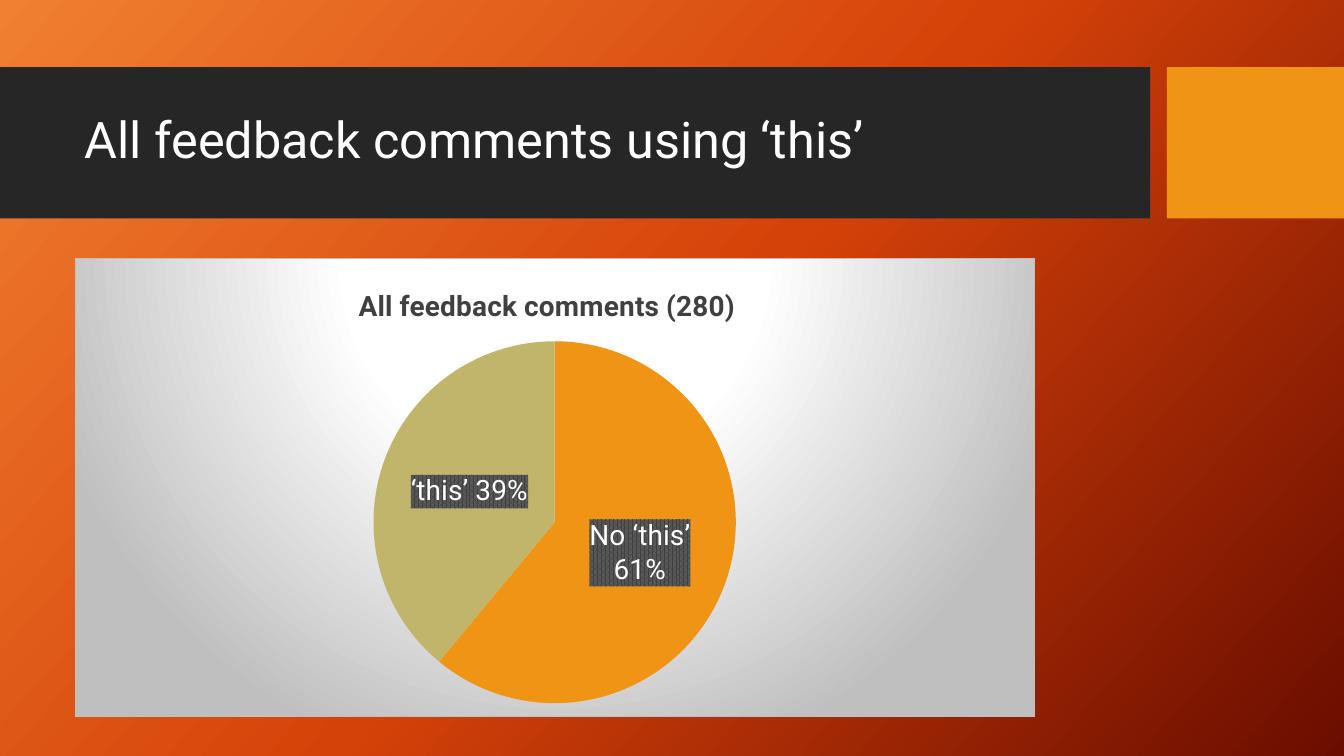
from lxml import etree
from pptx import Presentation
from pptx.chart.data import CategoryChartData
from pptx.dml.color import RGBColor
from pptx.enum.chart import XL_CHART_TYPE, XL_LABEL_POSITION
from pptx.enum.shapes import MSO_SHAPE
from pptx.enum.text import MSO_ANCHOR
from pptx.oxml import parse_xml
from pptx.oxml.ns import nsdecls, qn
from pptx.util import Pt

PIE = XL_CHART_TYPE.PIE
CENTER = XL_LABEL_POSITION.CENTER
RECTANGLE = MSO_SHAPE.RECTANGLE
MIDDLE = MSO_ANCHOR.MIDDLE

FONT = "Roboto"
COLORS = {
    "band": "262626", "orange": "F09415", "olive": "C1B56B", "white": "FFFFFF",
    "title": "404040", "gray": "BFBFBF", "label_front": "404040", "label_back": "595959",
    "glow": "F18031", "flame": "D54209", "ember": "6A0D00",
}


def rgb(name):
    return RGBColor.from_string(COLORS[name])


def gradient_xml(stops, direction):
    stop_xml = "".join(
        f'<a:gs pos="{percent * 1000}"><a:srgbClr val="{COLORS[name]}"/></a:gs>'
        for percent, name in stops)
    return f'<a:gradFill rotWithShape="1"><a:gsLst>{stop_xml}</a:gsLst>{direction}</a:gradFill>'


def chart_properties(content):
    return parse_xml(f'<c:spPr {nsdecls("c", "a")}>{content}</c:spPr>')


def place(element, index, **fractions):
    """Give a chart part a manual layout, in fractions of the chart area."""
    old_layout = element.find(qn("c:layout"))
    if old_layout is not None:
        element.remove(old_layout)
    layout = parse_xml(f'<c:layout {nsdecls("c")}><c:manualLayout/></c:layout>')
    settings = {"xMode": "edge", "yMode": "edge", **fractions}
    if "w" in fractions:
        settings = {"layoutTarget": "inner", **settings}
    for tag, value in settings.items():
        etree.SubElement(layout[0], qn(f"c:{tag}")).set("val", str(value))
    element.insert(index, layout)


class SlideBuilder:
    def __init__(self, slide):
        self.slide = slide

    def style(self, font, size, color, bold=False):
        font.name = FONT
        font.size = Pt(size)
        font.bold = bold
        font.color.rgb = rgb(color)

    def background(self, stops, angle):
        gradient = gradient_xml(stops, f'<a:lin ang="{angle * 60000}" scaled="0"/>')
        background = parse_xml(
            f'<p:bg {nsdecls("p", "a")}><p:bgPr>{gradient}<a:effectLst/></p:bgPr></p:bg>')
        self.slide.element.cSld.insert(0, background)

    def rectangle(self, left, top, width, height, color):
        shape = self.slide.shapes.add_shape(
            RECTANGLE, Pt(left), Pt(top), Pt(width), Pt(height))
        shape.shadow.inherit = False
        shape.fill.solid()
        shape.fill.fore_color.rgb = rgb(color)
        shape.line.fill.background()

    def heading(self, left, top, width, height, text):
        box = self.slide.shapes.add_textbox(Pt(left), Pt(top), Pt(width), Pt(height))
        frame = box.text_frame
        frame.word_wrap = True
        frame.vertical_anchor = MIDDLE
        frame.text = text
        paragraph = frame.paragraphs[0]
        paragraph.line_spacing = 0.9
        self.style(paragraph.runs[0].font, 36, "white")

    def pie(self, left, top, width, height, title, slices):
        data = CategoryChartData()
        data.categories = [str(number + 1) for number in range(len(slices))]
        data.add_series("Series 1", [value for value, _, _ in slices])
        chart = self.slide.shapes.add_chart(
            PIE, Pt(left), Pt(top), Pt(width), Pt(height), data).chart
        chart.has_legend = False
        self.style(chart.font, 10, "white")
        self.chart_title(chart, title)
        self.chart_area(chart)
        plot = chart.plots[0]
        plot.vary_by_categories = True
        for index, (_, label, color) in enumerate(slices):
            self.pie_slice(plot.series[0].points[index], label, color)
        plot_area = chart.element.find(qn("c:chart")).find(qn("c:plotArea"))
        place(plot_area, 0, x=0.31, y=0.18, w=0.38, h=0.79)

    def chart_title(self, chart, text):
        chart.has_title = True
        frame = chart.chart_title.text_frame
        frame.text = text
        self.style(frame.paragraphs[0].runs[0].font, 20, "title", bold=True)
        place(chart.chart_title.element if hasattr(chart.chart_title, "element")
              else chart.element.find(qn("c:chart")).find(qn("c:title")), 1, x=0.29, y=0.05)

    def chart_area(self, chart):
        circle = ('<a:path path="circle"><a:fillToRect l="50000" t="-80000" '
                  'r="50000" b="180000"/></a:path>')
        gradient = gradient_xml([(0, "white"), (39, "white"), (100, "gray")], circle)
        border = (f'<a:ln w="{Pt(0.75)}"><a:solidFill>'
                  f'<a:srgbClr val="{COLORS["gray"]}"/></a:solidFill></a:ln>')
        chart.element.find(qn("c:chart")).addnext(chart_properties(gradient + border))

    def pie_slice(self, point, label, color):
        point.format.fill.solid()
        point.format.fill.fore_color.rgb = rgb(color)
        point.format.line.fill.background()
        frame = point.data_label.text_frame
        frame.text = label
        self.style(frame.paragraphs[0].runs[0].font, 20, "white")
        point.data_label.position = CENTER
        pattern = (
            '<a:pattFill prst="pct75">'
            f'<a:fgClr><a:srgbClr val="{COLORS["label_front"]}"/></a:fgClr>'
            f'<a:bgClr><a:srgbClr val="{COLORS["label_back"]}"/></a:bgClr></a:pattFill>')
        rich_text = frame._txBody.getparent()
        rich_text.addnext(chart_properties(pattern))


def main():
    presentation = Presentation()
    presentation.slide_width = Pt(960)
    presentation.slide_height = Pt(540)
    builder = SlideBuilder(presentation.slides.add_slide(presentation.slide_layouts[6]))

    builder.background([(0, "glow"), (50, "flame"), (100, "ember")], 42)
    builder.rectangle(0, 48, 821.5, 108, "band")
    builder.rectangle(833.5, 48, 126.5, 108, "orange")
    builder.heading(53.5, 59, 757, 85, "All feedback comments using ‘this’")
    builder.pie(53.5, 184.5, 685.5, 328, "All feedback comments (280)", [
        (61, "No ‘this’ 61%", "orange"),
        (39, "‘this’ 39%", "olive"),
    ])
    presentation.save("out.pptx")


if __name__ == "__main__":
    main()
